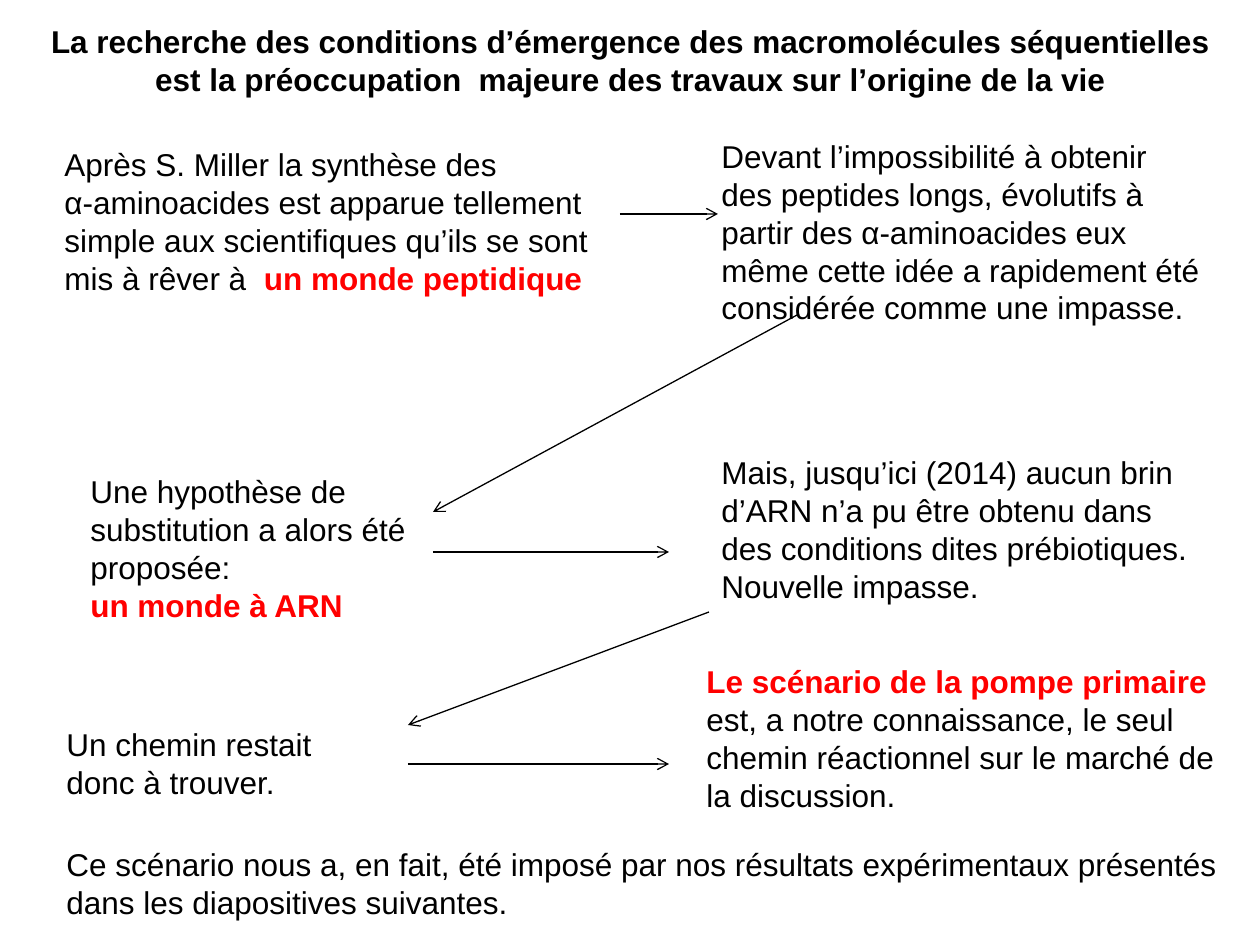
from lxml import etree
from pptx import Presentation
from pptx.dml.color import RGBColor
from pptx.enum.shapes import MSO_CONNECTOR
from pptx.enum.text import MSO_ANCHOR, MSO_AUTO_SIZE, PP_ALIGN
from pptx.oxml.ns import qn
from pptx.util import Pt

PX = 914400 / 126
BLACK = RGBColor(0, 0, 0)
RED = RGBColor(255, 0, 0)
FONT, SIZE = "Arial", Pt(18)

# Content: each text is a list of paragraphs, each paragraph a list of (text, emphasised) runs
TITLE = ("La recherche des conditions d’émergence des macromolécules séquentielles "
         "est la préoccupation  majeure des travaux sur l’origine de la vie")
TITLE_BOX = (25, 16, 1211, 89)

# Left, top, width, height, wraps, paragraphs
STATEMENTS = [
    (52, 139, 551, 165, True, [[
        ("Après S. Miller la synthèse des\vα-aminoacides est apparue tellement simple "
         "aux scientifiques qu’ils se sont mis à rêver à\u00a0 ", False),
        ("un monde peptidique", True)]]),
    (709, 131, 507, 204, True, [[
        ("Devant l’impossibilité à obtenir des peptides longs, évolutifs à partir des "
         "α-aminoacides eux même cette idée a rapidement été considérée comme une "
         "impasse.", False)]]),
    (78, 466, 364, 165, True, [
        [("Une hypothèse de substitution a alors été proposée:", False)],
        [("un monde à ARN", True)]]),
    (709, 447, 507, 165, True, [
        [("Mais, jusqu’ici (2014) aucun brin d’ARN n’a pu être obtenu dans des "
          "conditions dites prébiotiques.", False)],
        [("Nouvelle impasse.", False)]]),
    (54, 719, 273, 89, False, [
        [("Un chemin restait", False)],
        [("donc à trouver.", False)]]),
    (694, 656, 541, 165, True, [
        [("Le scénario de la pompe primaire", True)],
        [("est, a notre connaissance, le seul chemin réactionnel sur le marché de la "
          "discussion.", False)]]),
    (54, 839, 1181, 89, True, [[
        ("Ce scénario nous a, en fait, été imposé par nos résultats expérimentaux "
         "présentés dans les diapositives suivantes.", False)]]),
]

# Start x, start y, end x, end y, in reading order
ARROWS = [
    (620, 214, 718, 214),
    (799, 314, 433, 512),
    (433, 552, 669, 552),
    (709, 612, 408, 725),
    (408, 764, 669, 764),
]


def emu(lengths):
    return [round(length * PX) for length in lengths]


def add_run(paragraph, text, color, bold):
    # A vertical tab in the content marks a line break
    for i, line in enumerate(text.split("\v")):
        if i:
            paragraph.add_line_break()
        run = paragraph.add_run()
        run.text = line
        run.font.name, run.font.size, run.font.bold = FONT, SIZE, bold
        run.font.color.rgb = color


def add_statement(slide, left, top, width, height, wraps, paragraphs):
    statement = slide.shapes.add_textbox(*emu((left, top, width, height)))
    frame = statement.text_frame
    frame.word_wrap = wraps
    frame.auto_size = MSO_AUTO_SIZE.SHAPE_TO_FIT_TEXT
    for i, runs in enumerate(paragraphs):
        paragraph = frame.add_paragraph() if i else frame.paragraphs[0]
        for text, emphasised in runs:
            add_run(paragraph, text, RED if emphasised else BLACK, emphasised)


def add_arrow(slide, ends):
    arrow = slide.shapes.add_connector(MSO_CONNECTOR.STRAIGHT, *emu(ends))
    arrow.line.color.rgb = BLACK
    arrow.line.width = Pt(0.75)
    etree.SubElement(arrow.line._get_or_add_ln(), qn("a:tailEnd"), type="arrow")
    etree.SubElement(arrow._element.spPr, qn("a:effectLst"))


def main():
    prs = Presentation()
    prs.slide_width, prs.slide_height = emu((1260, 945))
    slide = prs.slides.add_slide(prs.slide_layouts[5])

    # Title
    title = slide.shapes.title
    title.left, title.top, title.width, title.height = emu(TITLE_BOX)
    frame = title.text_frame
    frame.word_wrap = True
    frame.auto_size = MSO_AUTO_SIZE.SHAPE_TO_FIT_TEXT
    frame.vertical_anchor = MSO_ANCHOR.TOP
    frame.paragraphs[0].alignment = PP_ALIGN.CENTER
    add_run(frame.paragraphs[0], TITLE, BLACK, True)

    # Statements and the arrows that lead from one to the next
    for statement in STATEMENTS:
        add_statement(slide, *statement)
    for ends in ARROWS:
        add_arrow(slide, ends)

    prs.save("out.pptx")


if __name__ == "__main__":
    main()
